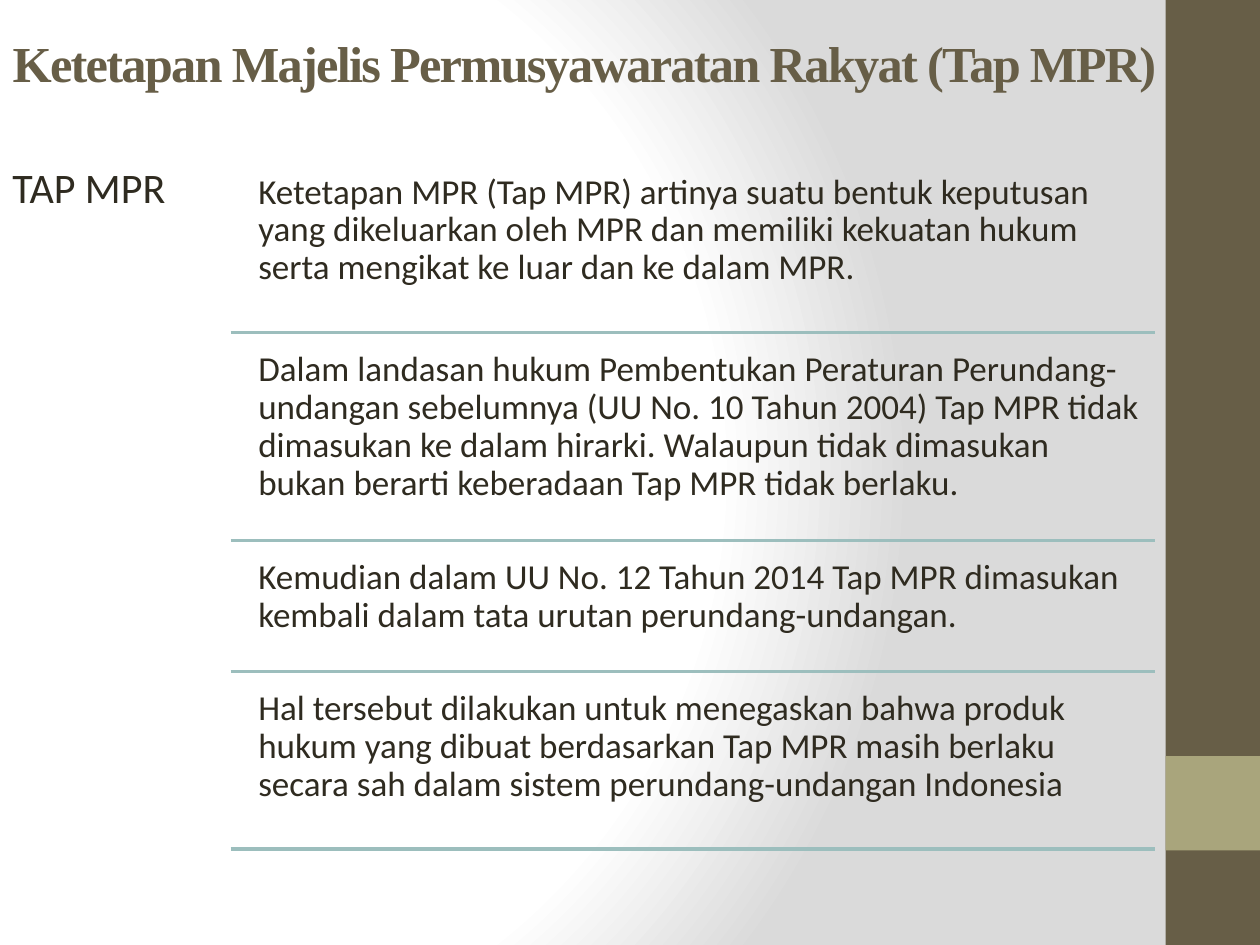
from lxml import etree
from pptx import Presentation
from pptx.dml.color import RGBColor
from pptx.enum.shapes import MSO_CONNECTOR, MSO_SHAPE
from pptx.enum.text import MSO_ANCHOR, PP_ALIGN
from pptx.oxml import parse_xml
from pptx.oxml.ns import nsdecls, qn
from pptx.util import Inches, Pt

RECTANGLE = MSO_SHAPE.RECTANGLE
STRAIGHT = MSO_CONNECTOR.STRAIGHT
TOP, MIDDLE = MSO_ANCHOR.TOP, MSO_ANCHOR.MIDDLE
LEFT = PP_ALIGN.LEFT

BROWN = RGBColor(0x67, 0x5E, 0x47)
OLIVE = RGBColor(0xA9, 0xA5, 0x7C)
INK = RGBColor(0x2F, 0x2B, 0x20)
TEAL = RGBColor(0x9C, 0xBE, 0xBD)

WIDTH, HEIGHT = 10, 7.5
BAND = HEIGHT / 10
RULE_LEFT, RULE_RIGHT = 1.83, 9.17
TEXT_LEFT = 1.97
FIRST_ROW, ROW_GAP = 1.3, 0.07

STATEMENTS = [
    (1.34, "Ketetapan MPR (Tap MPR) artinya suatu bentuk keputusan yang dikeluarkan "
           "oleh MPR dan memiliki kekuatan hukum serta mengikat ke luar dan ke dalam MPR."),
    (1.58, "Dalam landasan hukum Pembentukan Peraturan Perundang-undangan sebelumnya "
           "(UU No. 10 Tahun 2004) Tap MPR tidak dimasukan ke dalam hirarki. Walaupun "
           "tidak dimasukan bukan berarti keberadaan Tap MPR tidak berlaku."),
    (0.97, "Kemudian dalam UU No. 12 Tahun 2014 Tap MPR dimasukan kembali dalam tata "
           "urutan perundang-undangan."),
    (1.34, "Hal tersebut dilakukan untuk menegaskan bahwa produk hukum yang dibuat "
           "berdasarkan Tap MPR masih berlaku secara sah dalam sistem "
           "perundang-undangan Indonesia"),
]

BACKGROUND = f"""<p:bg {nsdecls('p', 'a')}><p:bgPr>
<a:gradFill rotWithShape="1"><a:gsLst>
<a:gs pos="0"><a:srgbClr val="FFFFFF"/></a:gs>
<a:gs pos="75000"><a:srgbClr val="FFFFFF"/></a:gs>
<a:gs pos="100000"><a:srgbClr val="DADADA"/></a:gs>
</a:gsLst><a:path path="circle">
<a:fillToRect l="20000" t="50000" r="100000" b="50000"/>
</a:path></a:gradFill><a:effectLst/></p:bgPr></p:bg>"""


def set_background(page):
    page.element.find(qn("p:cSld")).insert(0, parse_xml(BACKGROUND))


def add_band(page, top, height, color):
    band = page.shapes.add_shape(RECTANGLE, Inches(WIDTH - BAND), Inches(top),
                                 Inches(BAND), Inches(height))
    band.shadow.inherit = False
    band.fill.solid()
    band.fill.fore_color.rgb = color
    band.line.fill.background()


def write(frame, text, font, size, color, bold=False):
    frame.word_wrap = True
    para = frame.paragraphs[0]
    para.alignment = LEFT
    span = para.add_run()
    span.text = text
    span.font.name = font
    span.font.size = Pt(size)
    span.font.color.rgb = color
    span.font.bold = bold
    return para, span


def add_title(page, text):
    title = page.shapes.title
    title.left, title.top = Inches(0), Inches(0.03)
    title.width, title.height = Inches(9.41), Inches(0.93)
    title.text_frame.vertical_anchor = MIDDLE
    span = write(title.text_frame, text, "Times New Roman", 28.8, BROWN, True)[1]
    span.font._element.set("spc", "-100")


def add_text(page, left, top, width, height, text, size, inset):
    box = page.shapes.add_textbox(Inches(left), Inches(top), Inches(width), Inches(height))
    frame = box.text_frame
    frame.vertical_anchor = TOP
    frame.margin_left = frame.margin_right = Inches(inset)
    frame.margin_top = frame.margin_bottom = Inches(inset)
    para = write(frame, text, "Calibri", size, INK)[0]
    para.line_spacing = 0.9


def add_rule(page, top):
    rule = page.shapes.add_connector(STRAIGHT, Inches(RULE_LEFT), Inches(top),
                                     Inches(RULE_RIGHT), Inches(top))
    rule.line.color.rgb = TEAL
    rule.line.width = Pt(2)
    etree.SubElement(rule._element.spPr, qn("a:effectLst"))


def add_statements(page):
    top = FIRST_ROW
    for height, text in STATEMENTS:
        add_text(page, TEXT_LEFT, top, RULE_RIGHT - TEXT_LEFT, height, text, 20, 0.08)
        add_rule(page, top + height)
        top += height + ROW_GAP


def main():
    deck = Presentation()
    deck.slide_width, deck.slide_height = Inches(WIDTH), Inches(HEIGHT)
    page = deck.slides.add_slide(deck.slide_layouts[5])
    set_background(page)
    add_band(page, 0, HEIGHT, BROWN)
    add_band(page, HEIGHT - 2 * BAND, BAND, OLIVE)
    add_title(page, "Ketetapan Majelis Permusyawaratan Rakyat (Tap MPR)")
    add_text(page, 0, 1.23, RULE_LEFT, 5.58, "TAP MPR", 24, 0.1)
    add_statements(page)
    deck.save("out.pptx")


if __name__ == "__main__":
    main()
